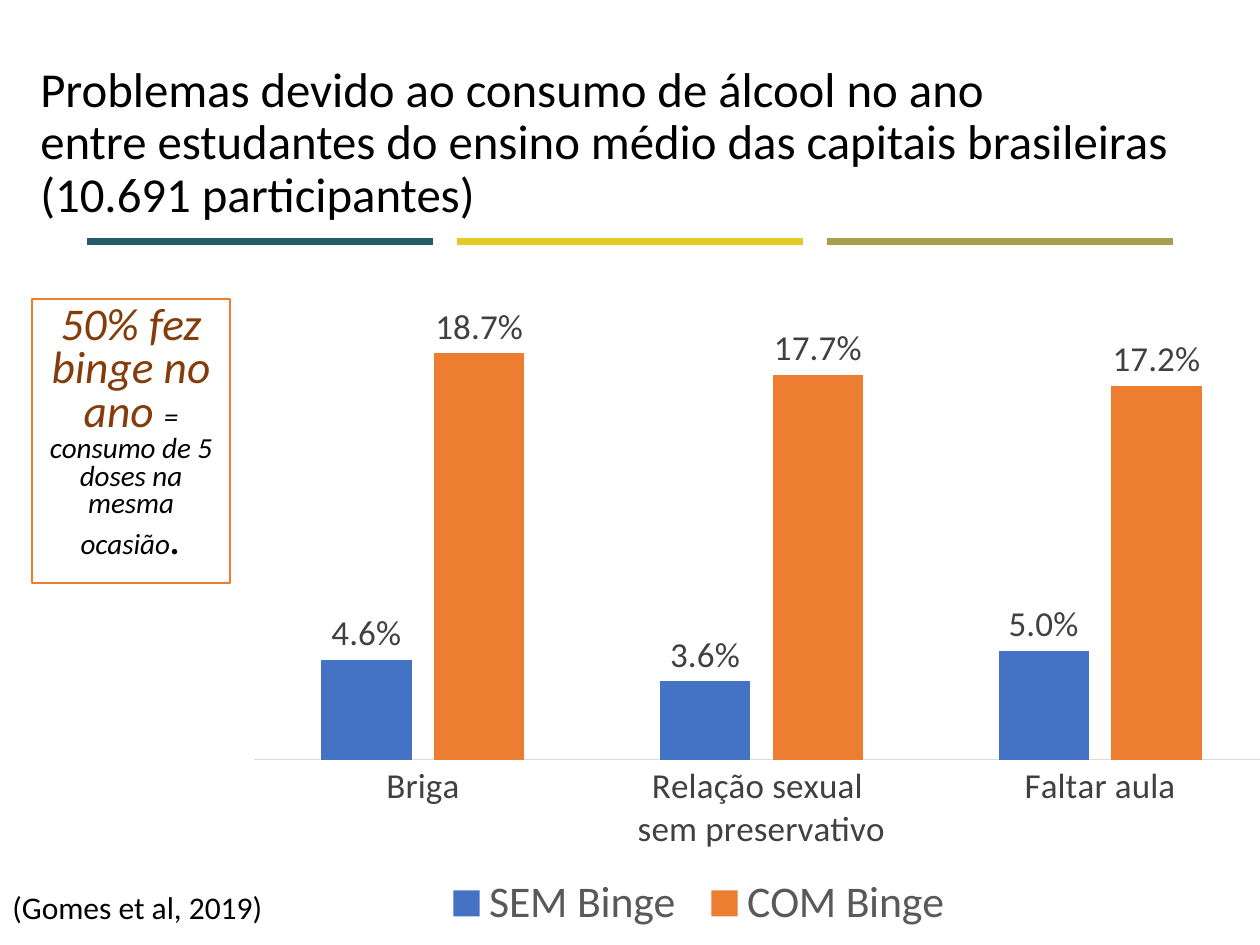
from lxml import etree
from pptx import Presentation, util as u
from pptx.chart.data import CategoryChartData
from pptx.dml.color import RGBColor
from pptx.enum import chart as ch, shapes, text
from pptx.oxml import ns

PX = 914400 / 126
FONT = "Calibri"
BLACK = RGBColor(0, 0, 0)
WHITE = RGBColor(255, 255, 255)
TEAL = RGBColor(0x24, 0x5A, 0x6A)
YELLOW = RGBColor(0xE5, 0xCA, 0x25)
OLIVE = RGBColor(0xA6, 0x9F, 0x4F)
BLUE = RGBColor(0x44, 0x72, 0xC4)
ORANGE = RGBColor(0xED, 0x7D, 0x31)
BROWN = RGBColor(0x84, 0x3C, 0x0B)
DARK = RGBColor(0x40, 0x40, 0x40)
GREY = RGBColor(0x59, 0x59, 0x59)
PALE = RGBColor(0xD9, 0xD9, 0xD9)


def emu(*vals):
    return [u.Emu(round(v * PX)) for v in vals]


def style(font, size, color, italic=None):
    font.name = FONT
    font.size = u.Pt(size)
    font.color.rgb = color
    font.bold = False
    font.italic = italic


def add_run(para, words, *look):
    run = para.add_run()
    run.text = words
    style(run.font, *look)


def add_box(slide, box):
    shape = slide.shapes.add_textbox(*emu(*box))
    shape.text_frame.word_wrap = True
    return shape


def add_title(slide, box):
    frame = add_box(slide, box).text_frame
    frame.margin_top = frame.margin_bottom = 0
    para = frame.paragraphs[0]
    para.line_spacing = 0.9
    look = (27.9, BLACK)
    add_run(para, "Problemas devido ao consumo de álcool no ano", *look)
    para.add_line_break()
    add_run(para, "entre estudantes do ensino médio das capitais brasileiras "
            "(10.691 participantes)", *look)


def add_rules(slide, box):
    left, top, width, height = box
    gap = 24
    part = (width - 2 * gap) / 3
    for i, color in enumerate((TEAL, YELLOW, OLIVE)):
        bar = slide.shapes.add_shape(
            shapes.MSO_SHAPE.RECTANGLE,
            *emu(left + i * (part + gap), top, part, height))
        bar.shadow.inherit = False
        bar.fill.solid()
        bar.fill.fore_color.rgb = color
        bar.line.fill.background()


def add_note(slide, box):
    shape = add_box(slide, box)
    shape.fill.solid()
    shape.fill.fore_color.rgb = WHITE
    shape.line.color.rgb = ORANGE
    shape.line.width = u.Pt(1)
    para = shape.text_frame.paragraphs[0]
    para.alignment = text.PP_ALIGN.CENTER
    para.line_spacing = 0.8
    add_run(para, "50% fez binge no ano ", 25.9, BROWN, True)
    add_run(para, "= consumo de 5 doses na mesma ocasião", 16.6, BLACK, True)
    add_run(para, ".", 25.9, BLACK, True)


def set_layout(part, inner=False, **fracs):
    """Place a chart part by fractions of the chart's size."""
    for old in part.findall(ns.qn("c:layout")):
        part.remove(old)
    layout = etree.Element(ns.qn("c:layout"))
    manual = etree.SubElement(layout, ns.qn("c:manualLayout"))
    vals = {"layoutTarget": "inner"} if inner else {}
    vals.update(xMode="edge", yMode="edge", **fracs)
    for tag, val in vals.items():
        etree.SubElement(manual, ns.qn("c:" + tag)).set("val", str(val))
    pos = part.find(ns.qn("c:legendPos"))
    if pos is None:
        part.insert(0, layout)
    else:
        pos.addnext(layout)


def add_bars(slide, box):
    data = CategoryChartData(number_format="0.0%")
    data.categories = ["Briga", "Relação sexual \nsem preservativo",
                       "Faltar aula"]
    data.add_series("SEM Binge", (0.046, 0.036, 0.05))
    data.add_series("COM Binge", (0.187, 0.177, 0.172))
    chart = slide.shapes.add_chart(
        ch.XL_CHART_TYPE.COLUMN_CLUSTERED, *emu(*box), data).chart
    style(chart.font, 10, BLACK)
    chart.has_title = False

    # Bars and their labels
    plot = chart.plots[0]
    plot.vary_by_categories = False
    plot.gap_width = 150
    plot.overlap = -25
    for series, color in zip(plot.series, (BLUE, ORANGE)):
        series.format.fill.solid()
        series.format.fill.fore_color.rgb = color
        labels = series.data_labels
        labels.show_value = True
        labels.number_format = "0.0%"
        labels.number_format_is_linked = False
        labels.position = ch.XL_LABEL_POSITION.OUTSIDE_END
        style(labels.font, 20, DARK)

    # Axes
    cat, val = chart.category_axis, chart.value_axis
    cat.major_tick_mark = ch.XL_TICK_MARK.NONE
    cat.format.line.color.rgb = PALE
    cat.format.line.width = u.Pt(0.75)
    style(cat.tick_labels.font, 20, DARK)
    val.minimum_scale, val.maximum_scale = 0, 0.2
    val.has_major_gridlines = False
    val.visible = False

    # Legend and layout
    chart.has_legend = True
    legend = chart.legend
    legend.position = ch.XL_LEGEND_POSITION.TOP
    legend.include_in_layout = False
    style(legend.font, 25, GREY)
    area = chart.element.find(".//" + ns.qn("c:plotArea"))
    set_layout(area, True, x=0, y=0.03, w=0.97, h=0.68)
    key = chart.element.find(".//" + ns.qn("c:legend"))
    set_layout(key, x=0.17, y=0.89, w=0.51, h=0.09)


def add_source(slide, box):
    frame = add_box(slide, box).text_frame
    frame.auto_size = text.MSO_AUTO_SIZE.SHAPE_TO_FIT_TEXT
    add_run(frame.paragraphs[0], "(Gomes et al, 2019)", 18, BLACK)


def main():
    deck = Presentation()
    deck.slide_width, deck.slide_height = emu(1260, 945)
    slide = deck.slides.add_slide(deck.slide_layouts[6])
    add_rules(slide, (87, 238, 1086, 7))
    add_title(slide, (28, 65, 1182, 158))
    add_note(slide, (32, 299, 198, 284))
    add_bars(slide, (253, 305, 1048, 640))
    add_source(slide, (0, 882, 310, 50))
    deck.save("out.pptx")


if __name__ == "__main__":
    main()
